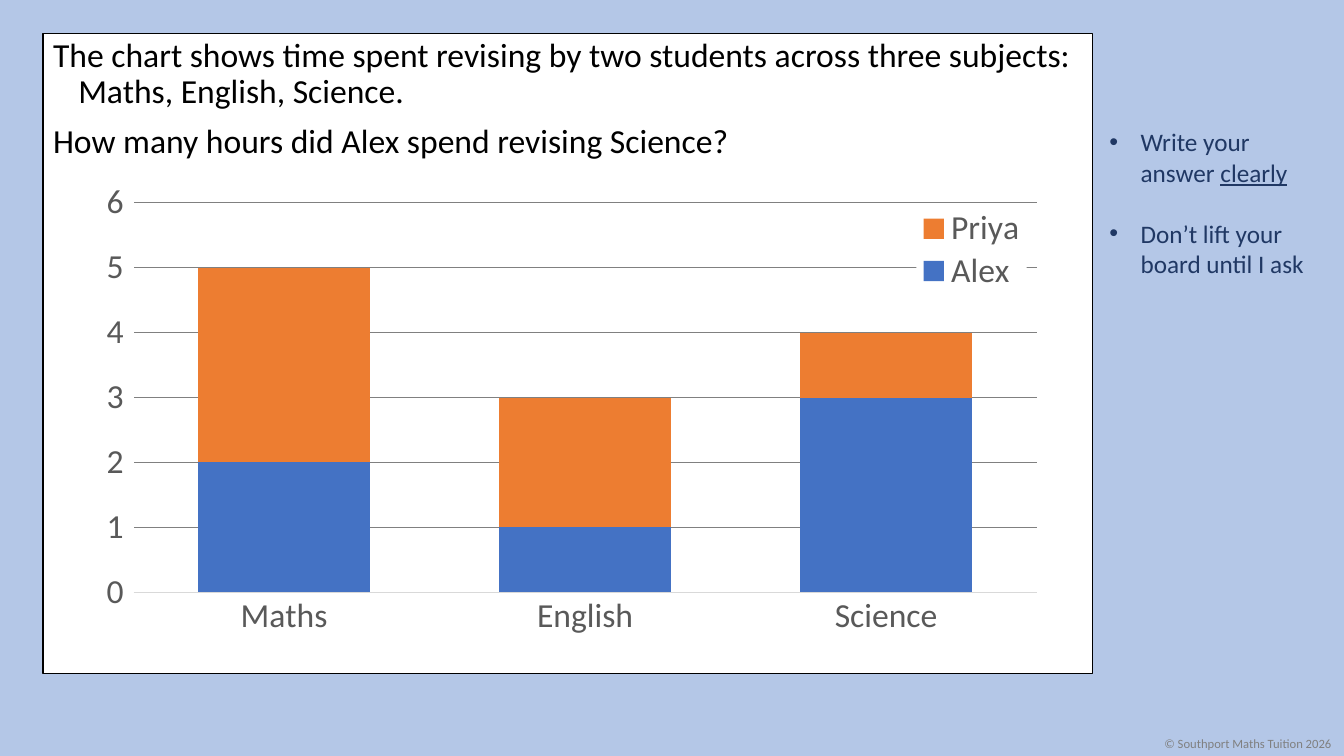
from lxml import etree
from pptx import Presentation
from pptx.chart.data import CategoryChartData as Data
from pptx.dml.color import RGBColor as RGB
from pptx.enum.chart import XL_CHART_TYPE as Kind
from pptx.enum.chart import XL_LEGEND_POSITION as Side
from pptx.enum.chart import XL_TICK_MARK as Tick
from pptx.enum.shapes import MSO_SHAPE as Form
from pptx.enum.text import MSO_ANCHOR as Anchor
from pptx.enum.text import MSO_AUTO_SIZE as Fit
from pptx.oxml import parse_xml
from pptx.oxml.ns import nsdecls, qn
from pptx.util import Inches, Pt

WIDE, HIGH = 13.33, 7.5
SKY = RGB(0xB4, 0xC7, 0xE7)
WHITE = RGB(0xFF, 0xFF, 0xFF)
BLACK = RGB(0, 0, 0)
NAVY = RGB(0x20, 0x38, 0x64)
GREY = RGB(0x80, 0x80, 0x80)
DARK = RGB(0x59, 0x59, 0x59)
PALE = RGB(0xD9, 0xD9, 0xD9)
BLUE = RGB(0x44, 0x72, 0xC4)
ORANGE = RGB(0xED, 0x7D, 0x31)

CARD = (0.032, 0.044, 0.781, 0.847)  # shares of the slide: left, top, width, height
TIPS = (0.818, 0.161, 0.174, 0.216)
RIGHTS = (0.859, 0.967, 0.141, 0.033)
GRAPH = (0.0435, 0.236, 0.7457, 0.631)


def assign(item, **values):
    for name, value in values.items():
        setattr(item, name, value)


class Deck:
    face = "Calibri"

    def __init__(self):
        self.show = Presentation()
        assign(self.show, slide_width=Inches(WIDE), slide_height=Inches(HIGH))
        self.slide = self.show.slides.add_slide(self.show.slide_layouts[1])
        title = self.slide.shapes.title._element
        title.getparent().remove(title)
        fill = self.slide.background.fill
        fill.solid()
        fill.fore_color.rgb = SKY

    def place(self, area):
        """Turn shares of the slide into lengths."""
        return [Inches(share * side) for share, side in zip(area, (WIDE, HIGH) * 2)]

    def style(self, font, size, color):
        assign(font, name=self.face, size=Pt(size))
        font.color.rgb = color

    def stroke(self, line, color, width):
        line.color.rgb = color
        line.width = Pt(width)

    def panel(self, area):
        box = self.slide.shapes.add_shape(Form.RECTANGLE, *self.place(area))
        box.shadow.inherit = False
        box.fill.solid()
        box.fill.fore_color.rgb = WHITE
        self.stroke(box.line, BLACK, 1)

    def text(self, frame, paras, size, color, hang=0, mark="", gap=0, **values):
        """Fill a frame; each paragraph is a list of (text, underlined) pairs."""
        for i, parts in enumerate(paras):
            para = frame.add_paragraph() if i else frame.paragraphs[0]
            props = para._p.get_or_add_pPr()
            props.set("marL", str(Inches(hang)))
            props.set("indent", str(-Inches(hang)))
            if mark:
                etree.SubElement(props, qn("a:buFont")).set("typeface", "Arial")
                etree.SubElement(props, qn("a:buChar")).set("char", mark)
            else:
                etree.SubElement(props, qn("a:buNone"))
            assign(para, space_before=Pt(gap if i else 0), **values)
            for words, under in parts:
                run = para.add_run()
                run.text = words
                self.style(run.font, size, color)
                if under:
                    run.font.underline = True

    def body(self, area, paras, **format):
        hold = self.slide.placeholders[1]
        self.slide.shapes._spTree.append(hold._element)  # in front of the panel
        for name, value in zip(("left", "top", "width", "height"), self.place(area)):
            setattr(hold, name, value)
        assign(hold.text_frame, auto_size=Fit.NONE, vertical_anchor=Anchor.TOP)
        self.text(hold.text_frame, paras, **format)

    def note(self, area, paras, wrap=True, **format):
        frame = self.slide.shapes.add_textbox(*self.place(area)).text_frame
        assign(frame, word_wrap=wrap, auto_size=Fit.SHAPE_TO_FIT_TEXT)
        self.text(frame, paras, **format)

    def layout(self, area, inner=False):
        """Make a fixed chart layout from shares of the chart's size."""
        target = '<c:layoutTarget val="inner"/>' if inner else ""
        modes = "".join(f'<c:{k}Mode val="edge"/>' for k in "xy")
        sides = "".join(f'<c:{k} val="{v}"/>' for k, v in zip("xywh", area))
        return parse_xml(f'<c:layout {nsdecls("c")}><c:manualLayout>{target}{modes}{sides}'
                         "</c:manualLayout></c:layout>")

    def chart(self, area, cats, series, plot_area, key_area):
        data = Data()
        data.categories = cats
        for name, values, _ in series:
            data.add_series(name, values)
        chart = self.slide.shapes.add_chart(
            Kind.COLUMN_STACKED, *self.place(area), data).chart
        chart.has_title = False
        self.style(chart.font, 10, BLACK)
        plot = chart.plots[0]
        assign(plot, gap_width=75, overlap=100, vary_by_categories=False)
        for bar, (_, _, color) in zip(plot.series, series):
            bar.format.fill.solid()
            bar.format.fill.fore_color.rgb = color

        base, scale = chart.category_axis, chart.value_axis
        assign(base, major_tick_mark=Tick.NONE)
        assign(scale, major_tick_mark=Tick.OUTSIDE, has_major_gridlines=True,
               minimum_scale=0, maximum_scale=6, major_unit=1)
        self.stroke(base.format.line, PALE, 0.75)
        self.stroke(scale.major_gridlines.format.line, GREY, 0.75)
        scale.format.line.fill.background()

        chart.has_legend = True
        key = chart.legend
        assign(key, position=Side.RIGHT, include_in_layout=True)
        for font in (base.tick_labels.font, scale.tick_labels.font, key.font):
            self.style(font, 24, DARK)

        field = chart._chartSpace.find(".//" + qn("c:plotArea"))
        for old in field.findall(qn("c:layout")):
            field.remove(old)
        field.insert(0, self.layout(plot_area, inner=True))
        root = key._element
        for old in root.findall(qn("c:layout")):
            root.remove(old)
        root.find(qn("c:legendPos")).addnext(self.layout(key_area))
        root.find(qn("c:overlay")).addnext(parse_xml(
            f'<c:spPr {nsdecls("c", "a")}><a:solidFill><a:srgbClr val="{WHITE}"/>'
            "</a:solidFill></c:spPr>"))


def main():
    deck = Deck()
    deck.panel(CARD)
    deck.note(TIPS, [[("Write your answer ", False), ("clearly", True)],
                     [("Don’t lift your board until I ask", False)]],
              size=18, color=NAVY, hang=0.31, mark="•", gap=22)
    deck.note(RIGHTS, [[("© Southport Maths Tuition 2026", False)]],
              wrap=False, size=9, color=GREY)
    deck.body(CARD, [[("The chart shows time spent revising by two students across "
                       "three subjects: Maths, English, Science.", False)],
                     [("How many hours did Alex spend revising Science?", False)]],
              size=24, color=BLACK, hang=0.25, gap=10, line_spacing=0.9)
    deck.chart(GRAPH, ["Maths", "English", "Science"],
               [("Alex", (2, 1, 3), BLUE), ("Priya", (3, 2, 1), ORANGE)],
               plot_area=(0.075, 0.051, 0.901, 0.817),
               key_area=(0.856, 0.06, 0.11, 0.18))
    deck.show.save("out.pptx")


if __name__ == "__main__":
    main()
